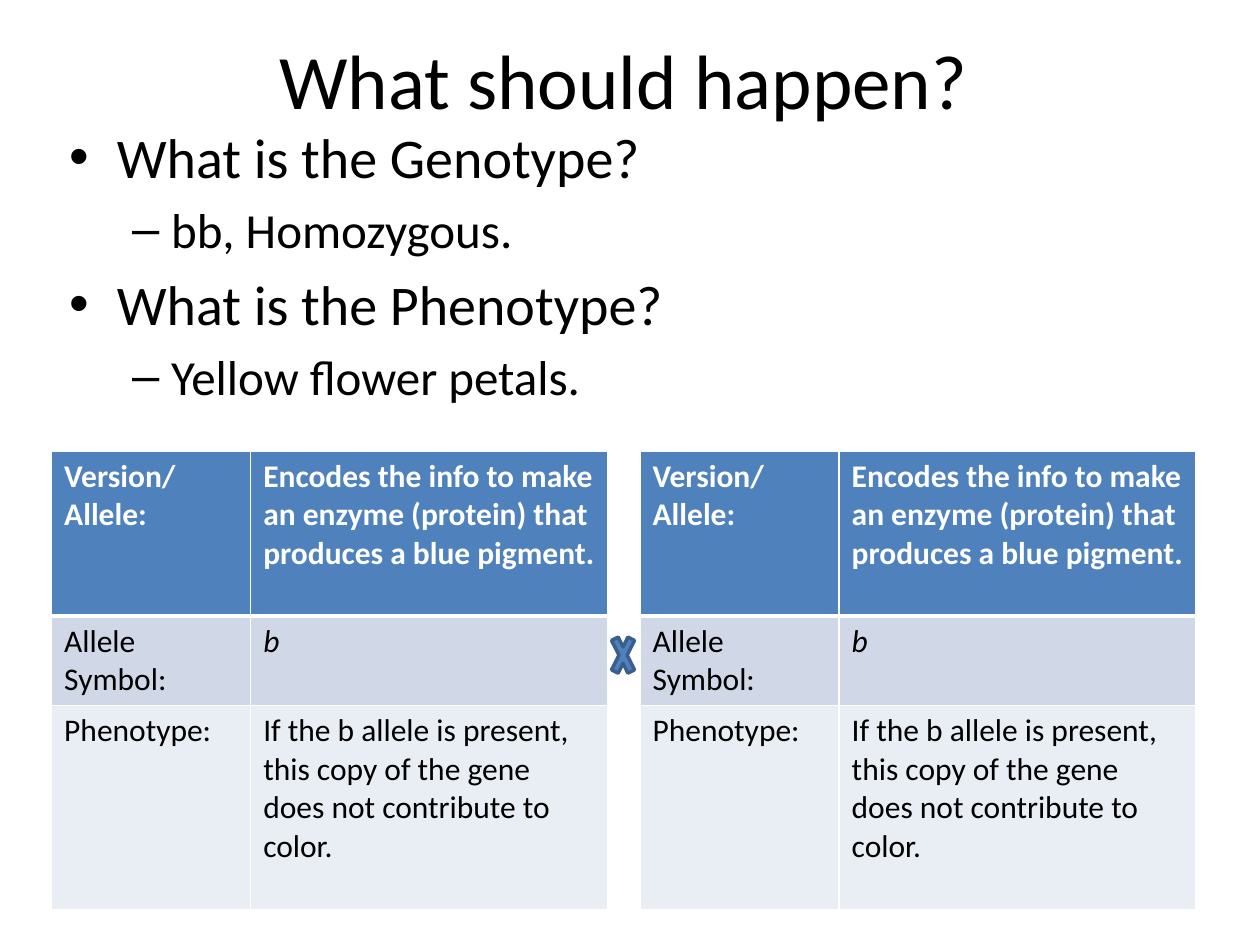
import pptx
import pptx.util
import pptx.dml.color
import pptx.enum.shapes
import pptx.enum.text
import pptx.oxml
import pptx.oxml.ns

Inches = pptx.util.Inches
Pt = pptx.util.Pt
RGBColor = pptx.dml.color.RGBColor

BLACK = RGBColor(0, 0, 0)
WHITE = RGBColor(255, 255, 255)
BLUE = RGBColor(0x4F, 0x81, 0xBD)
NAVY = RGBColor(0x3A, 0x5F, 0x8C)
PALE = RGBColor(0xD0, 0xD8, 0xE8)
MIST = RGBColor(0xE9, 0xED, 0xF4)

POINTS = [
    (0, "What is the Genotype?"),
    (1, "bb, Homozygous."),
    (0, "What is the Phenotype?"),
    (1, "Yellow flower petals."),
]
LEVELS = [("•", 32, 0.38, 0.38), ("–", 28, 0.81, 0.31)]
ROWS = [
    (1.31, BLUE, [["Version/", "Allele:"],
                  ["Encodes the info to make an enzyme (protein) that produces a blue pigment."]]),
    (0.71, PALE, [["Allele Symbol:"], ["b"]]),
    (1.62, MIST, [["Phenotype:"],
                  ["If the b allele is present, this copy of the gene does not contribute to color."]]),
]
WIDTHS = [1.58, 2.83]


def add_run(para, text, size, color=BLACK, bold=False, slant=False):
    run = para.add_run()
    run.text = text
    font = run.font
    font.name = "Calibri"
    font.size = Pt(size)
    font.color.rgb = color
    font.bold = bold
    font.italic = slant


def add_box(slide, left, top, width, height):
    box = slide.shapes.add_textbox(Inches(left), Inches(top), Inches(width), Inches(height))
    box.text_frame.word_wrap = True
    return box.text_frame


def add_title(slide, text):
    frame = add_box(slide, 0.45, 0, 9, 1.25)
    frame.vertical_anchor = pptx.enum.text.MSO_ANCHOR.MIDDLE
    para = frame.paragraphs[0]
    para.alignment = pptx.enum.text.PP_ALIGN.CENTER
    add_run(para, text, 44)


def set_bullet(para, mark, left, hang):
    props = para._p.get_or_add_pPr()
    props.set("marL", str(Inches(left)))
    props.set("indent", str(-Inches(hang)))
    for tag, key, value in [("buFont", "typeface", "Arial"), ("buChar", "char", mark)]:
        node = pptx.oxml.parse_xml(f'<a:{tag} {pptx.oxml.ns.nsdecls("a")} {key}="{value}"/>')
        props.append(node)


def add_points(slide, points):
    frame = add_box(slide, 0.45, 0.92, 9, 4.95)
    for i, (level, text) in enumerate(points):
        para = frame.add_paragraph() if i else frame.paragraphs[0]
        mark, size, left, hang = LEVELS[level]
        para.level = level
        para.space_before = Pt(size * 0.2)
        set_bullet(para, mark, left, hang)
        add_run(para, text, size)


def set_edges(cell, base):
    props = cell._tc.get_or_add_tcPr()
    sides = [("L", 1), ("R", 1), ("T", 1), ("B", base)]
    for i, (side, width) in enumerate(sides):
        line = pptx.oxml.parse_xml(
            f'<a:ln{side} {pptx.oxml.ns.nsdecls("a")} w="{Pt(width)}">'
            f'<a:solidFill><a:srgbClr val="{WHITE}"/></a:solidFill></a:ln{side}>')
        props.insert(i, line)


def fill_cell(cell, lines, fill, head):
    cell.fill.solid()
    cell.fill.fore_color.rgb = fill
    set_edges(cell, 3 if head else 1)
    frame = cell.text_frame
    for i, text in enumerate(lines):
        para = frame.add_paragraph() if i else frame.paragraphs[0]
        add_run(para, text, 18, WHITE if head else BLACK, head, text == "b")


def add_allele(slide, left):
    height = sum(row[0] for row in ROWS)
    frame = slide.shapes.add_table(len(ROWS), len(WIDTHS), Inches(left), Inches(3.58),
                                   Inches(sum(WIDTHS)), Inches(height))
    table = frame.table
    for col, width in zip(table.columns, WIDTHS):
        col.width = Inches(width)
    for r, (tall, fill, cells) in enumerate(ROWS):
        table.rows[r].height = Inches(tall)
        for c, lines in enumerate(cells):
            fill_cell(table.cell(r, c), lines, fill, r == 0)


def add_cross(slide):
    kind = pptx.enum.shapes.MSO_SHAPE.MATH_MULTIPLY
    cross = slide.shapes.add_shape(kind, Inches(4.82), Inches(4.95), Inches(0.25), Inches(0.5))
    cross.shadow.inherit = False
    cross.fill.solid()
    cross.fill.fore_color.rgb = BLUE
    cross.line.color.rgb = NAVY
    cross.line.width = Pt(2)


def main():
    deck = pptx.Presentation()
    deck.slide_width = Inches(10)
    deck.slide_height = Inches(7.5)
    slide = deck.slides.add_slide(deck.slide_layouts[6])
    add_title(slide, "What should happen?")
    add_points(slide, POINTS)
    for left in (0.41, 5.08):
        add_allele(slide, left)
    add_cross(slide)
    deck.save("out.pptx")


if __name__ == "__main__":
    main()
